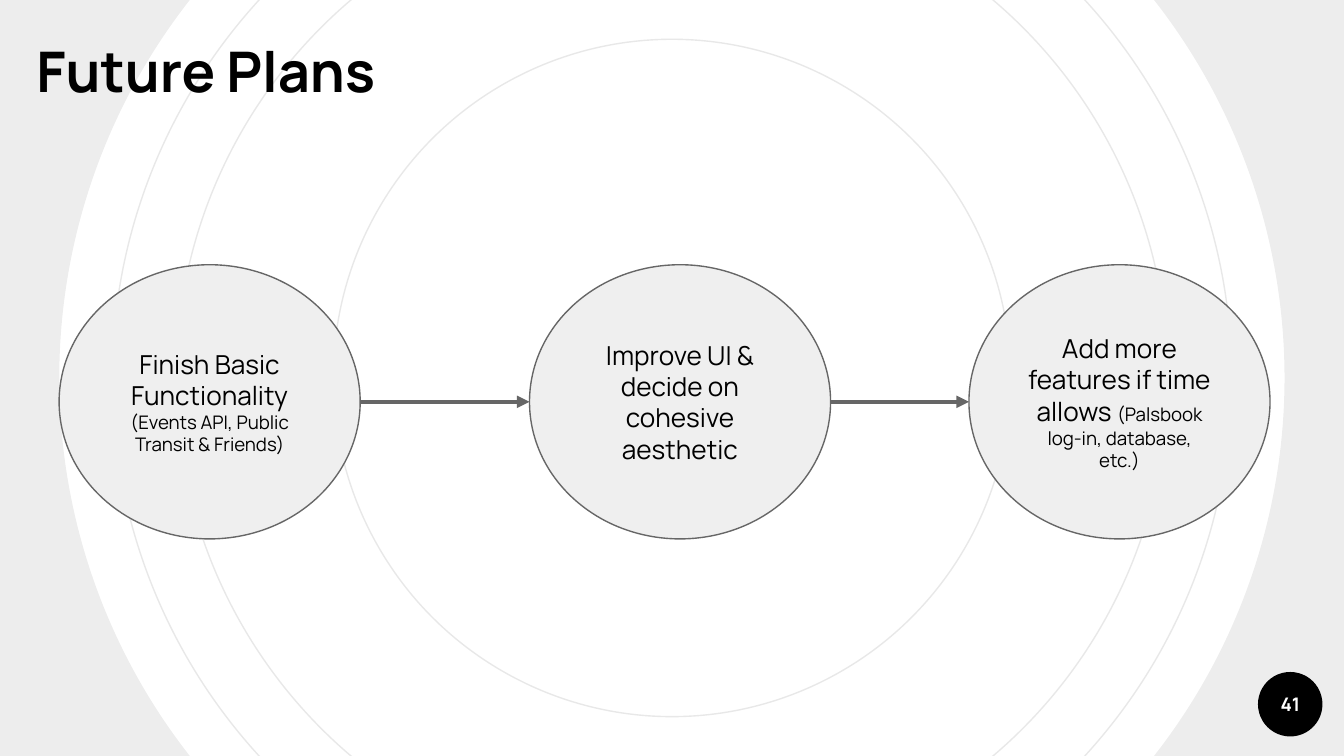
from dataclasses import dataclass

from pptx import Presentation
from pptx.dml.color import RGBColor
from pptx.enum.shapes import MSO_CONNECTOR as CONN, MSO_SHAPE as SHAPE
from pptx.enum.text import MSO_ANCHOR as ANCHOR, MSO_AUTO_SIZE as FIT, PP_ALIGN as ALIGN
from pptx.oxml.ns import qn
from pptx.util import Inches, Pt
from lxml.etree import SubElement

SLIDE_W = 10
SLIDE_H = SLIDE_W * 9 / 16


@dataclass(frozen=True)
class Theme:
    """Colours, font and type sizes of the deck."""
    font: str = "Manrope"
    ink: str = "000000"
    paper: str = "FFFFFF"
    ring: str = "E8E8E8"
    bubble: str = "EFEFEF"
    edge: str = "666666"
    title: int = 30
    body: int = 14
    small: int = 10
    thin: float = 0.75
    thick: float = 2.25


def rgb(value):
    """Turn a hex string into a colour."""
    return RGBColor.from_string(value)


def write(tf, runs, font, color, bold=False, align=ALIGN.CENTER, anchor=ANCHOR.MIDDLE):
    """Fill a text frame with one paragraph of (text, size) runs."""
    tf.auto_size = FIT.NONE
    tf.word_wrap = True
    tf.vertical_anchor = anchor
    tf.margin_left = tf.margin_right = Inches(0.1)
    tf.margin_top = tf.margin_bottom = Inches(0.1)
    p = tf.paragraphs[0]
    p.alignment = align
    for text, size in runs:
        r = p.add_run()
        r.text = text
        r.font.name = font
        r.font.size = Pt(size)
        r.font.bold = bold
        r.font.color.rgb = rgb(color)


class SlideBuilder:
    """Draws styled elements on the current slide."""

    def __init__(self, s, theme):
        """Keep the slide and its theme."""
        self.s = s
        self.theme = theme

    def shape(self, kind, x, y, w, h, fill=None, line=None):
        """Add a preset shape with an optional fill and outline."""
        sp = self.s.shapes.add_shape(kind, Inches(x), Inches(y), Inches(w), Inches(h))
        sp.shadow.inherit = False
        if fill:
            sp.fill.solid()
            sp.fill.fore_color.rgb = rgb(fill)
        else:
            sp.fill.background()
        if line:
            sp.line.color.rgb = rgb(line)
            sp.line.width = Pt(self.theme.thin)
        else:
            sp.line.fill.background()
        return sp

    def centered(self, kind, size, **style):
        """Add a round shape around the middle of the slide."""
        x, y = (SLIDE_W - size) / 2, (SLIDE_H - size) / 2
        return self.shape(kind, x, y, size, size, **style)

    def backdrop(self):
        """Draw the concentric rings and the translucent outer band."""
        for size in (8.33, 7.38, 5.04):
            self.centered(SHAPE.OVAL, size, line=self.theme.ring)
        band = self.centered(SHAPE.DONUT, 11.54, fill=self.theme.ink)
        band.adjustments[0] = 0.105
        color = next(band.element.spPr.iter(qn("a:srgbClr")))
        SubElement(color, qn("a:alpha")).set("val", "7000")

    def title(self, text):
        """Place the title placeholder in front of the backdrop."""
        t = self.theme
        sp = self.s.shapes.title
        sp.left, sp.top, sp.width, sp.height = map(Inches, (0.17, 0.17, 6.91, 0.79))
        write(sp.text_frame, [(text, t.title)], t.font, t.ink, bold=True,
              align=ALIGN.LEFT, anchor=ANCHOR.TOP)
        sp.element.getparent().append(sp.element)

    def page_badge(self, number):
        """Draw the page number over its black disc."""
        t = self.theme
        box = (9.36, 5, 0.48, 0.48)
        self.shape(SHAPE.OVAL, *box, fill=t.ink)
        tb = self.s.shapes.add_textbox(*map(Inches, box))
        write(tb.text_frame, [(number, t.small)], t.font, t.paper, bold=True)

    def bubble(self, x, y, w, h, text, note):
        """Draw one step with its smaller note."""
        t = self.theme
        sp = self.shape(SHAPE.OVAL, x, y, w, h, fill=t.bubble, line=t.edge)
        runs = [(text, t.body)] + ([(note, t.small)] if note else [])
        write(sp.text_frame, runs, t.font, t.ink)

    def arrow(self, x1, x2, y):
        """Draw a horizontal arrow."""
        cx = self.s.shapes.add_connector(CONN.STRAIGHT, Inches(x1), Inches(y),
                                         Inches(x2), Inches(y))
        cx.line.color.rgb = rgb(self.theme.edge)
        cx.line.width = Pt(self.theme.thick)
        ln = cx.element.spPr.find(qn("a:ln"))
        SubElement(ln, qn("a:tailEnd")).set("type", "triangle")
        SubElement(cx.element.spPr, qn("a:effectLst"))


STEPS = [
    (0.44, "Finish Basic Functionality ", "(Events API, Public Transit & Friends)"),
    (3.94, "Improve UI & decide on cohesive aesthetic", ""),
    (7.21, "Add more features if time allows ", "(Palsbook log-in, database, etc.)"),
]
TOP, WIDTH, HEIGHT = 1.97, 2.24, 2.04


def main():
    """Build and save the slide."""
    prs = Presentation()
    prs.slide_width, prs.slide_height = Inches(SLIDE_W), Inches(SLIDE_H)
    slide = SlideBuilder(prs.slides.add_slide(prs.slide_layouts[5]), Theme())
    slide.backdrop()
    slide.page_badge("41")
    slide.title("Future Plans")
    for x, text, note in STEPS:
        slide.bubble(x, TOP, WIDTH, HEIGHT, text, note)
    for (left, *_), (right, *_) in zip(STEPS, STEPS[1:]):
        slide.arrow(left + WIDTH, right, TOP + HEIGHT / 2)
    prs.save("out.pptx")


if __name__ == "__main__":
    main()
